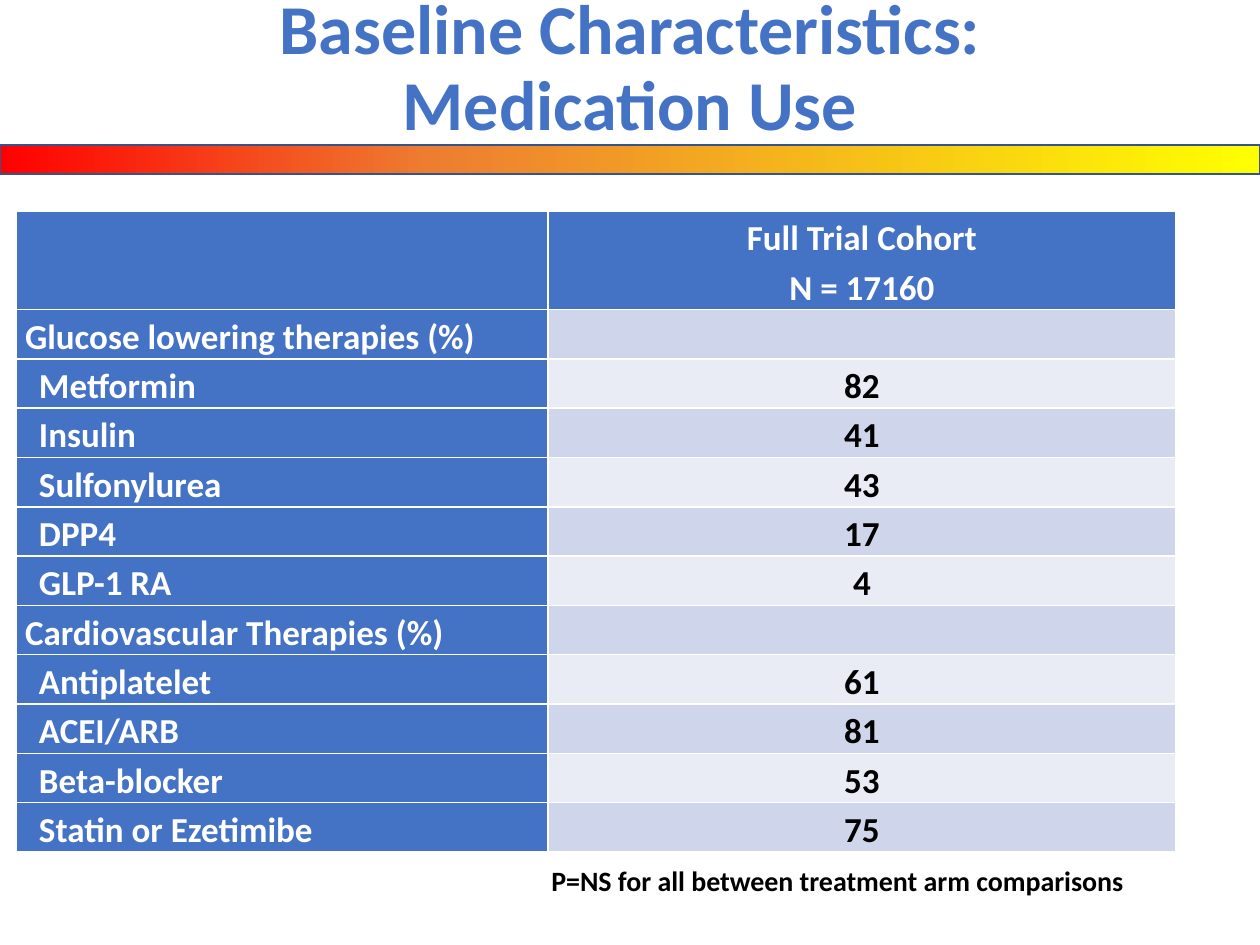
"""Build the baseline medication use slide."""
import lxml.etree
import pptx
import pptx.dml.color
import pptx.enum.shapes
import pptx.enum.text
import pptx.oxml
import pptx.oxml.ns
import pptx.util

PX = 914400 // 126
BLUE, WHITE, BLACK = "4472C4", "FFFFFF", "000000"
BANDS = ["CFD5EA", "E9EBF5"]
CENTER = pptx.enum.text.PP_ALIGN.CENTER
MIDDLE = pptx.enum.text.MSO_ANCHOR.MIDDLE


def color(value):
    return pptx.dml.color.RGBColor.from_string(value)


def format_text(frame, size, value, align=None, spacing=None):
    for para in frame.paragraphs:
        para.alignment = align
        para.line_spacing = spacing
        for span in para.runs:
            span.font.name = "Calibri"
            span.font.size = pptx.util.Pt(size)
            span.font.bold = True
            span.font.color.rgb = color(value)


deck = pptx.Presentation()
deck.slide_width, deck.slide_height = pptx.util.Inches(10), pptx.util.Inches(7.5)
page = deck.slides.add_slide(deck.slide_layouts[5])

title = page.shapes.title
title.left, title.top, title.width, title.height = 0, -15 * PX, deck.slide_width, 170 * PX
title.text_frame.text = "Baseline Characteristics:\vMedication Use"
title.text_frame.vertical_anchor = MIDDLE
format_text(title.text_frame, 40, BLUE, CENTER, 0.9)

bar = page.shapes.add_shape(
    pptx.enum.shapes.MSO_SHAPE.RECTANGLE, 0, 145 * PX, deck.slide_width, 29 * PX)
bar.shadow.inherit = False
bar.line.color.rgb = color("325491")
bar.line.width = pptx.util.Pt(1)
bar.fill.gradient()
bar.fill.gradient_angle = 0
stops = bar._element.find(".//" + pptx.oxml.ns.qn("a:gsLst"))
for stop in list(stops):
    stops.remove(stop)
for position, value in [(0, "FF0000"), (34, "ED7D31"), (100, "FFFF00")]:
    stop = lxml.etree.SubElement(stops, pptx.oxml.ns.qn("a:gs"), pos=str(position * 1000))
    lxml.etree.SubElement(stop, pptx.oxml.ns.qn("a:srgbClr"), val=value)

rows = [
    ("", "Full Trial Cohort\nN = 17160"),
    ("Glucose lowering therapies (%)", ""),
    ("Metformin", "82"),
    ("Insulin", "41"),
    ("Sulfonylurea", "43"),
    ("DPP4", "17"),
    ("GLP-1 RA", "4"),
    ("Cardiovascular Therapies (%)", ""),
    ("Antiplatelet", "61"),
    ("ACEI/ARB", "81"),
    ("Beta-blocker", "53"),
    ("Statin or Ezetimibe", "75"),
]
table = page.shapes.add_table(
    len(rows), 2, 16 * PX, 211 * PX, 1160 * PX, 637 * PX).table
table.columns[0].width, table.columns[1].width = 532 * PX, 628 * PX
for row, texts in enumerate(rows):
    table.rows[row].height = (49 if row else 98) * PX
    for column, text in enumerate(texts):
        cell = table.cell(row, column)
        cell.margin_left = cell.margin_right = 9 * PX
        cell.margin_top = cell.margin_bottom = 0
        cell.text_frame.text = text
        is_value = row > 0 and column == 1
        format_text(cell.text_frame, 20, BLACK if is_value else WHITE,
                    CENTER if column else None, 1.15)
        if row == 0:
            cell.vertical_anchor = MIDDLE
        if column == 0 and texts[1].isdigit():
            cell.text_frame.paragraphs[0]._p.get_or_add_pPr().set("marL", str(14 * PX))
        for side in ["lnL", "lnR", "lnT", "lnB"]:
            cell._tc.get_or_add_tcPr().append(pptx.oxml.parse_xml(
                f'<a:{side} {pptx.oxml.ns.nsdecls("a")} w="12700"><a:solidFill>'
                f'<a:srgbClr val="{WHITE}"/></a:solidFill></a:{side}>'))
        cell.fill.solid()
        cell.fill.fore_color.rgb = color(BANDS[(row - 1) % 2] if is_value else BLUE)

note = page.shapes.add_textbox(539 * PX, 857 * PX, 605 * PX, 47 * PX)
note.text_frame.word_wrap = False
note.text_frame.auto_size = pptx.enum.text.MSO_AUTO_SIZE.SHAPE_TO_FIT_TEXT
note.text_frame.text = "P=NS for all between treatment arm comparisons"
format_text(note.text_frame, 16, BLACK)

deck.save("out.pptx")
